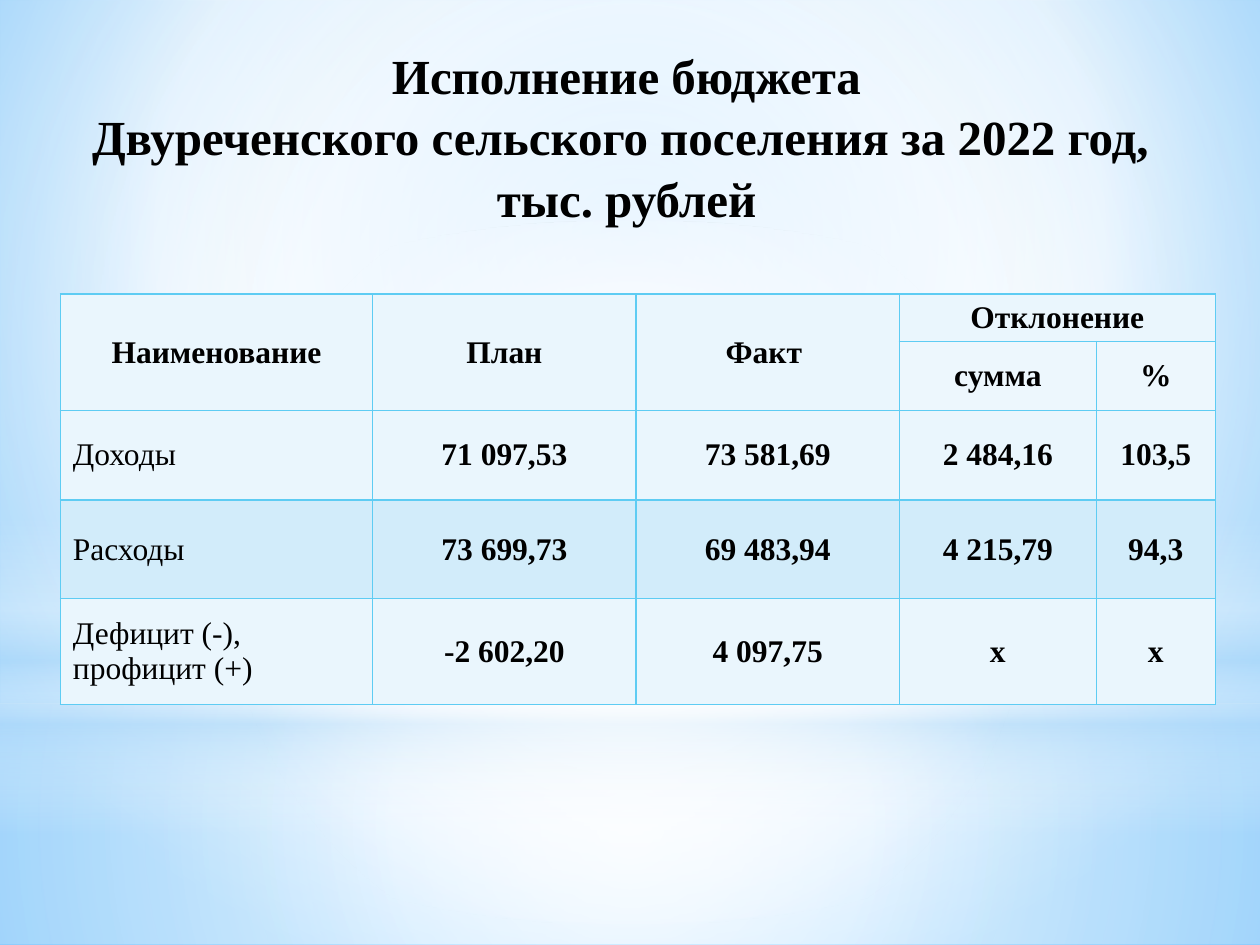
import dataclasses
import pptx
import pptx.util
import pptx.dml.color
import pptx.enum.shapes
import pptx.enum.text
import pptx.oxml
import pptx.oxml.ns
from pptx.util import Pt

NAMESPACE = pptx.oxml.ns.nsdecls("a")
MIDDLE = pptx.enum.text.MSO_ANCHOR.MIDDLE
CENTER = pptx.enum.text.PP_ALIGN.CENTER
LEFT = pptx.enum.text.PP_ALIGN.LEFT
SHAPES = pptx.enum.shapes.MSO_SHAPE


@dataclasses.dataclass(frozen=True)
class Theme:
    font: str = "Times New Roman"
    title_size: int = 28
    table_size: int = 18
    text: str = "000000"
    white: str = "FFFFFF"
    haze: str = "B4DCFA"
    sky: str = "9ED5FF"
    edge: str = "5BB9FF"
    border: str = "5ECCF3"
    light: str = "EAF6FD"
    pale: str = "EDF7FD"
    band: str = "D2ECFA"


class SlideBuilder:
    def __init__(self, theme, page):
        self.theme = theme
        self.page = page

    def gradient(self, fill, stops, focus=None):
        fill.gradient()
        marks = "".join(
            f'<a:gs pos="{place * 1000}"><a:srgbClr val="{color}">'
            f'<a:alpha val="{opacity * 1000}"/></a:srgbClr></a:gs>'
            for place, color, opacity in stops
        )
        if focus:
            left, top, right, bottom = (edge * 1000 for edge in focus)
            course = (f'<a:path path="circle"><a:fillToRect l="{left}" t="{top}" '
                      f'r="{right}" b="{bottom}"/></a:path>')
        else:
            course = '<a:lin ang="5400000" scaled="0"/>'
        source = pptx.oxml.parse_xml(
            f'<a:gradFill {NAMESPACE} rotWithShape="1"><a:gsLst>{marks}</a:gsLst>{course}</a:gradFill>'
        )
        target = fill._fill._gradFill
        target.getparent().replace(target, source)

    def glow(self, kind, top, height, stops, focus=None):
        shape = self.page.shapes.add_shape(kind, Pt(0), Pt(top), Pt(720), Pt(height))
        shape.shadow.inherit = False
        shape.line.fill.background()
        self.gradient(shape.fill, stops, focus)

    def span(self, para, text, size, bold=True):
        span = para.add_run()
        span.text = text
        span.font.name = self.theme.font
        span.font.size = Pt(size)
        span.font.bold = bold
        span.font.color.rgb = pptx.dml.color.RGBColor.from_string(self.theme.text)

    def title(self, paragraphs):
        box = self.page.shapes.title
        box.left, box.top, box.width, box.height = Pt(9), Pt(24), Pt(698), Pt(106.5)
        frame = box.text_frame
        frame.word_wrap = True
        frame.auto_size = pptx.enum.text.MSO_AUTO_SIZE.NONE
        frame.vertical_anchor = MIDDLE
        for index, lines in enumerate(paragraphs):
            para = frame.add_paragraph() if index else frame.paragraphs[0]
            para.alignment = CENTER
            para.line_spacing = 1.04
            for number, line in enumerate(lines):
                if number:
                    para.add_line_break()
                self.span(para, line, self.theme.title_size)
        self.page.shapes._spTree.append(box._element)

    def border(self, cell):
        properties = cell._tc.get_or_add_tcPr()
        for index, side in enumerate(("lnL", "lnR", "lnT", "lnB")):
            properties.insert(index, pptx.oxml.parse_xml(
                f'<a:{side} {NAMESPACE} w="12700"><a:solidFill>'
                f'<a:srgbClr val="{self.theme.border}"/></a:solidFill></a:{side}>'
            ))

    def table(self, left, top, widths, heights, rows, fills, merges):
        frame = self.page.shapes.add_table(
            len(heights), len(widths), Pt(left), Pt(top), Pt(sum(widths)), Pt(sum(heights)))
        table = frame.table
        table.first_row = False
        table.horz_banding = False
        for column, width in zip(table.columns, widths):
            column.width = Pt(width)
        for row, height in zip(table.rows, heights):
            row.height = Pt(height)
        for start, end in merges:
            table.cell(*start).merge(table.cell(*end))
        for row, (texts, fill) in enumerate(zip(rows, fills)):
            for column, text in enumerate(texts):
                cell = table.cell(row, column)
                label = row > 1 and column == 0
                cell.fill.solid()
                cell.fill.fore_color.rgb = pptx.dml.color.RGBColor.from_string(fill)
                cell.vertical_anchor = MIDDLE
                self.border(cell)
                if text:
                    para = cell.text_frame.paragraphs[0]
                    para.alignment = LEFT if label else CENTER
                    self.span(para, text, self.theme.table_size, not label)


def main():
    deck = pptx.Presentation()
    deck.slide_width, deck.slide_height = Pt(720), Pt(540)
    theme = Theme()
    page = deck.slides.add_slide(deck.slide_layouts[5])
    builder = SlideBuilder(theme, page)
    white, haze = theme.white, theme.haze
    center = (50, 50, 50, 50)

    builder.gradient(page.background.fill,
                     [(0, theme.sky, 100), (60, white, 100), (100, theme.edge, 100)],
                     (20, 10, 20, 60))
    builder.glow(SHAPES.RECTANGLE, 402, 138,
                 [(0, white, 91), (37, white, 76), (100, haze, 79)], center)
    builder.glow(SHAPES.RECTANGLE, 0, 402,
                 [(0, white, 89), (48, white, 62), (100, haze, 79)], center)
    builder.glow(SHAPES.RECTANGLE, 296.5, 180,
                 [(0, white, 0), (29, white, 30), (45, haze, 40),
                  (55, white, 26), (65, haze, 60), (100, white, 0)])
    builder.glow(SHAPES.OVAL, 126, 402, [(0, white, 100), (56, white, 0)], center)

    builder.table(
        34.5, 168, (178.5, 150.5, 150.5, 112.5, 68), (27, 39.5, 51, 56.5, 60.5),
        [
            ("Наименование", "План", "Факт ", "Отклонение", ""),
            ("", "", "", "сумма", "%"),
            ("Доходы", "71 097,53", "73 581,69", "2 484,16", "103,5"),
            ("Расходы", "73 699,73", "69 483,94", "4 215,79", "94,3"),
            ("Дефицит (-), профицит (+)", "-2 602,20", "4 097,75", "х", "х"),
        ],
        (theme.light, theme.pale, theme.light, theme.band, theme.light),
        [((0, column), (1, column)) for column in range(3)] + [((0, 3), (0, 4))],
    )
    builder.title([
        (" Исполнение бюджета ", "Двуреченского сельского поселения за 2022 год, "),
        ("тыс. рублей",),
    ])
    deck.save("out.pptx")


if __name__ == "__main__":
    main()
